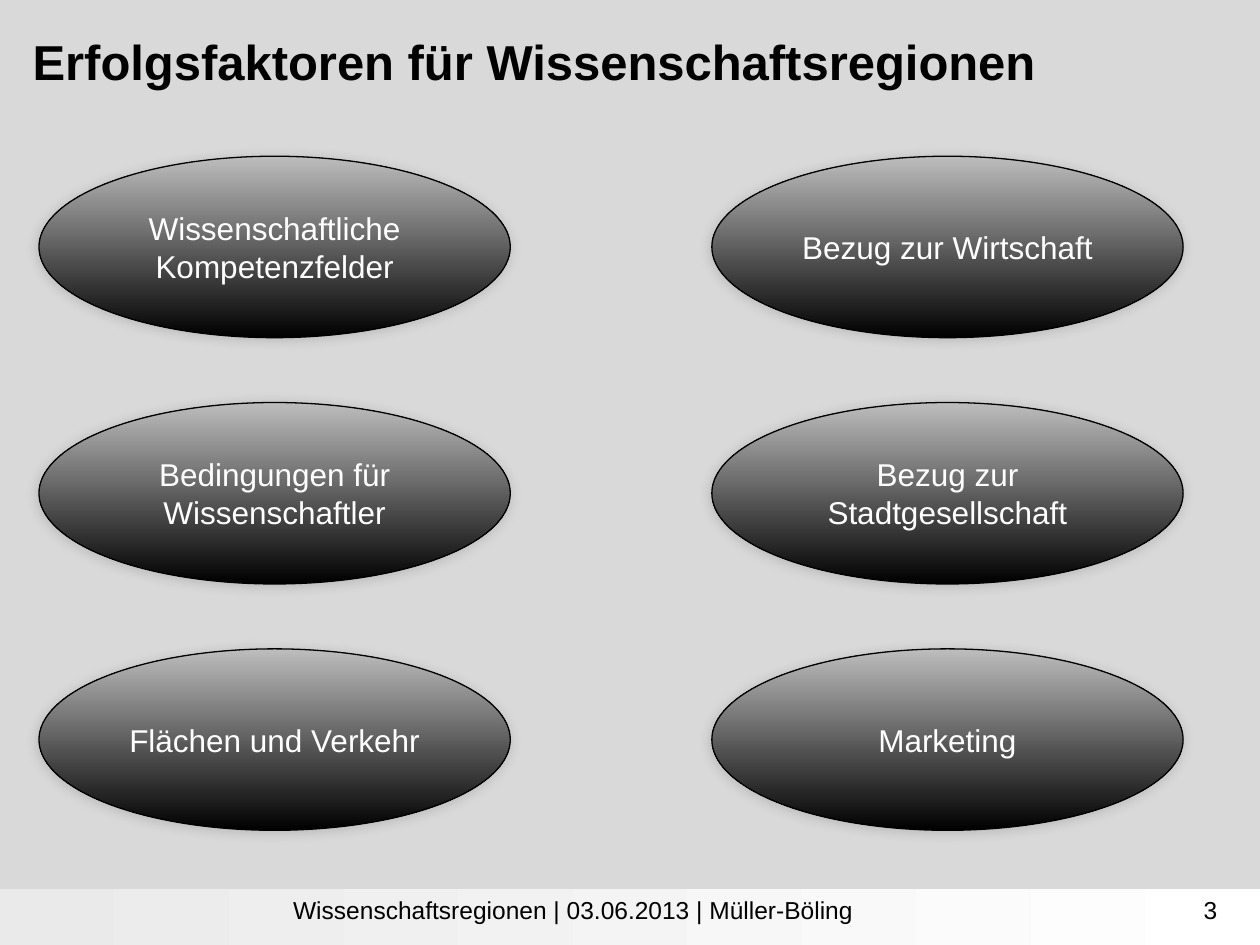
"""Build the slide on success factors for science regions."""
import lxml.etree
import pptx
import pptx.dml.color
import pptx.enum.shapes
import pptx.enum.text
import pptx.oxml.ns
import pptx.util

WIDTH, HEIGHT = 10, 7.5
FACTORS = [
    ["Wissenschaftliche Kompetenzfelder", "Bezug zur Wirtschaft"],
    ["Bedingungen für Wissenschaftler", "Bezug zur Stadtgesellschaft"],
    ["Flächen und Verkehr", "Marketing"],
]
GRID = {"left": 0.31, "top": 1.24, "column": 5.34, "row": 1.955}
ELLIPSE = (3.74, 1.44)
TITLE_FONT = {"size": pptx.util.Pt(28), "bold": True}
FOOTER_FONT = {"size": pptx.util.Pt(14)}
FACTOR_FONT = {"size": pptx.util.Pt(18)}
ALIGN = pptx.enum.text.PP_ALIGN
SHAPES = pptx.enum.shapes.MSO_SHAPE
TEXTS = [
    ("Erfolgsfaktoren für Wissenschaftsregionen", (0.16, 0.16, 9.62, 0.7),
     TITLE_FONT, ALIGN.LEFT, 0.09),
    ("Wissenschaftsregionen | 03.06.2013 | Müller-Böling", (0.16, 7.05, 8.78, 0.52),
     FOOTER_FONT, ALIGN.CENTER, 0.05),
    ("3", (7.43, 7.05, 2.33, 0.52), FOOTER_FONT, ALIGN.RIGHT, 0.05),
]


def color(value):
    return pptx.dml.color.RGBColor.from_string(value)


def inches(box):
    return [pptx.util.Inches(length) for length in box]


def write(shape, text, font, hue, alignment):
    shape.text_frame.word_wrap = True
    paragraph = shape.text_frame.paragraphs[0]
    paragraph.text = text
    paragraph.alignment = alignment
    for name, value in {"name": "Arial", **font}.items():
        setattr(paragraph.font, name, value)
    paragraph.font.color.rgb = color(hue)


def add_gradient_shape(slide, kind, box, hues, angle):
    shape = slide.shapes.add_shape(kind, *inches(box))
    shape.shadow.inherit = False
    shape.fill.gradient()
    shape.fill.gradient_angle = angle
    for stop, hue in zip(shape.fill.gradient_stops, hues):
        stop.color.rgb = color(hue)
    return shape


def add_shadow(shape):
    qualified = pptx.oxml.ns.qn
    effects = shape.element.spPr.find(qualified("a:effectLst"))
    shadow = lxml.etree.SubElement(
        effects, qualified("a:outerShdw"), blurRad=str(pptx.util.Pt(7)),
        dist=str(pptx.util.Pt(1)), dir="8100000", rotWithShape="0")
    hue = lxml.etree.SubElement(shadow, qualified("a:srgbClr"), val="000000")
    lxml.etree.SubElement(hue, qualified("a:alpha"), val="15000")


def add_factor(slide, text, column, row):
    box = (GRID["left"] + column * GRID["column"], GRID["top"] + row * GRID["row"], *ELLIPSE)
    shape = add_gradient_shape(slide, SHAPES.OVAL, box, ("000000", "BDBDBD"), 90)
    shape.line.color.rgb = color("000000")
    shape.line.width = pptx.util.Pt(0.75)
    add_shadow(shape)
    shape.text_frame.vertical_anchor = pptx.enum.text.MSO_ANCHOR.MIDDLE
    write(shape, text, FACTOR_FONT, "FFFFFF", ALIGN.CENTER)


def main():
    presentation = pptx.Presentation()
    presentation.slide_width, presentation.slide_height = inches((WIDTH, HEIGHT))
    slide = presentation.slides.add_slide(presentation.slide_layouts[6])
    slide.background.fill.solid()
    slide.background.fill.fore_color.rgb = color("D9D9D9")
    footer = add_gradient_shape(
        slide, SHAPES.RECTANGLE, (0, 7.06, WIDTH, HEIGHT - 7.06), ("FFFFFF", "EAEAEA"), 180)
    footer.line.fill.background()
    for text, box, font, alignment, margin in TEXTS:
        shape = slide.shapes.add_textbox(*inches(box))
        shape.text_frame.margin_top = pptx.util.Inches(margin)
        write(shape, text, font, "000000", alignment)
    for row, texts in enumerate(FACTORS):
        for column, text in enumerate(texts):
            add_factor(slide, text, column, row)
    presentation.save("out.pptx")


if __name__ == "__main__":
    main()
